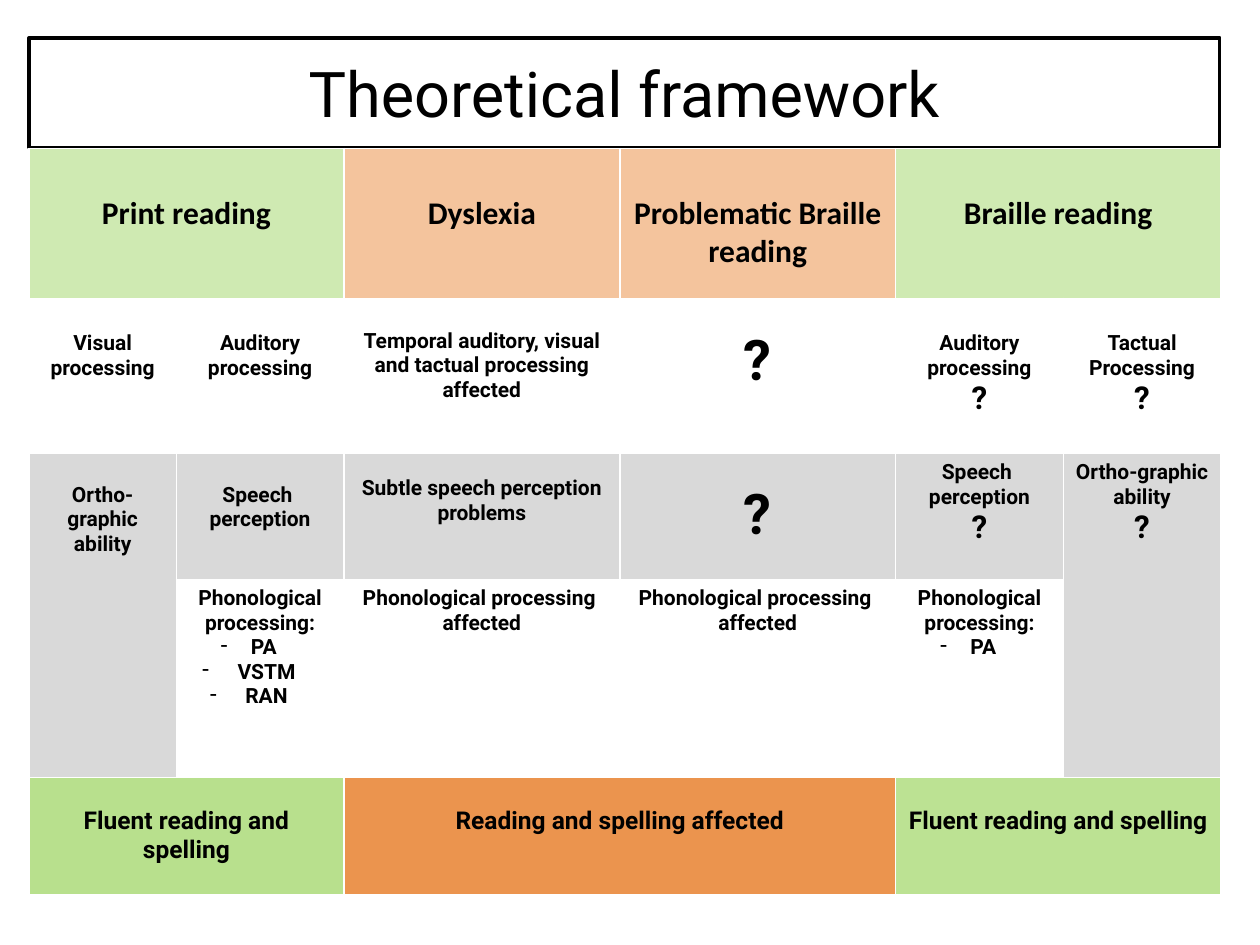
from lxml.etree import SubElement
from pptx import Presentation
from pptx.dml.color import RGBColor
from pptx.enum.text import MSO_ANCHOR, PP_ALIGN
from pptx.oxml import parse_xml
from pptx.oxml.ns import nsdecls, qn
from pptx.util import Inches, Pt

HUES = {"black": "000000", "white": "FFFFFF", "gray": "D9D9D9",
        "green": "92D050", "orange": "E46C0A"}
COLS = [1.17, 1.33, 2.19, 2.19, 1.33, 1.25]
ROWS = [1.2, 1.22, 1, 1.57, 0.93]

# Text lines: (wording, size); a leading "-" marks a bullet
HEAD, BODY, FOOT = 18, 12, 14
ASK, BIG = ("?", 18), ("?", 32)
PHONO = ["Phonological processing ", "affected"]
LIST = ["Phonological processing:", "-PA"]
FLUENT = ["Fluent reading and spelling"]

# Cells: row, column, row span, column span, fill, opacity, top inset, lines
CELLS = [
    (0, 0, 1, 2, "green", 44, 0.36, ["Print reading"]),
    (0, 2, 1, 1, "orange", 40, 0.36, ["Dyslexia"]),
    (0, 3, 1, 1, "orange", 40, 0.36, ["Problematic Braille reading"]),
    (0, 4, 1, 2, "green", 44, 0.36, ["Braille reading"]),
    (1, 0, 1, 1, "white", 100, 0.25, ["Visual", "processing"]),
    (1, 1, 1, 1, "white", 100, 0.25, ["Auditory", "processing"]),
    (1, 2, 1, 1, "white", 100, 0.23,
     ["Temporal auditory, visual and tactual processing affected"]),
    (1, 3, 1, 1, "white", 100, 0.23, [BIG]),
    (1, 4, 1, 1, "white", 100, 0.25, ["Auditory", "processing", ASK]),
    (1, 5, 1, 1, "white", 100, 0.25, ["Tactual", "Processing", ASK]),
    (2, 0, 2, 1, "gray", 100, 0.23, ["Ortho-graphic ability"]),
    (2, 1, 1, 1, "gray", 100, 0.23, ["Speech ", "perception"]),
    (2, 2, 1, 1, "gray", 100, 0.18, ["Subtle speech perception problems"]),
    (2, 3, 1, 1, "gray", 100, 0.23, [BIG]),
    (2, 4, 1, 1, "gray", 100, 0.05, ["Speech ", "perception", ASK]),
    (2, 5, 2, 1, "gray", 100, 0.05, ["Ortho-graphic ability", ASK]),
    (3, 1, 1, 1, "white", 100, 0.05, LIST + ["- VSTM", "- RAN"]),
    (3, 2, 1, 1, "white", 100, 0.05, PHONO),
    (3, 3, 1, 1, "white", 100, 0.05, PHONO),
    (3, 4, 1, 1, "white", 100, 0.05, LIST),
    (4, 0, 1, 2, "green", 65, 0.23, FLUENT),
    (4, 2, 1, 2, "orange", 72, 0.23, ["Reading and spelling affected"]),
    (4, 4, 1, 2, "green", 61, 0.23, FLUENT),
]


def hue(name):
    return RGBColor.from_string(HUES[name])


def add_run(para, text, size, face="Roboto", bold=True):
    para.alignment = PP_ALIGN.CENTER
    run = para.add_run()
    run.text = text
    font = run.font
    font.size, font.name, font.bold = Pt(size), face, bold
    font.color.rgb = hue("black")


def add_dash(para):
    props = para._p.get_or_add_pPr()
    props.set("marL", str(Inches(0.06)))
    props.set("indent", str(Inches(-0.24)))
    SubElement(props, qn("a:buChar")).set("char", "-")


def add_title(slide):
    title = slide.shapes.title
    title.left, title.top = Inches(0.23), Inches(0.3)
    title.width, title.height = Inches(9.45), Inches(0.87)
    title.fill.solid()
    title.fill.fore_color.rgb = hue("white")
    title.line.color.rgb = hue("black")
    title.line.width = Pt(2)
    frame = title.text_frame
    frame.vertical_anchor = MSO_ANCHOR.MIDDLE
    add_run(frame.paragraphs[0], "Theoretical framework", 36, bold=False)


def set_edges(cell, head):
    props = cell._tc.get_or_add_tcPr()
    for spot, side in enumerate("LRTB"):
        width = Pt(3 if head and side == "B" else 1)
        props.insert(spot, parse_xml(
            f'<a:ln{side} {nsdecls("a")} w="{width}"><a:solidFill>'
            f'<a:srgbClr val="{HUES["white"]}"/></a:solidFill></a:ln{side}>'))


def set_fill(cell, name, alpha):
    cell.fill.solid()
    cell.fill.fore_color.rgb = hue(name)
    if alpha < 100:
        color = cell._tc.tcPr.find(qn("a:solidFill")).find(qn("a:srgbClr"))
        SubElement(color, qn("a:alpha")).set("val", str(alpha * 1000))


def set_text(cell, row, top, lines):
    cell.margin_left = cell.margin_right = Inches(0.09)
    cell.margin_top = Inches(top)
    base = {0: HEAD, 4: FOOT}.get(row, BODY)
    face = "Calibri" if row == 0 else "Roboto"
    frame = cell.text_frame
    for num, line in enumerate(lines):
        text, size = (line, base) if isinstance(line, str) else line
        para = frame.add_paragraph() if num else frame.paragraphs[0]
        if text.startswith("-"):
            add_dash(para)
            text = text[1:]
        add_run(para, text, size, face)


def add_grid(slide):
    table = slide.shapes.add_table(
        len(ROWS), len(COLS), Inches(0.23), Inches(1.18),
        Inches(sum(COLS)), Inches(sum(ROWS))).table
    table.first_row = table.horz_banding = False
    for col, width in zip(table.columns, COLS):
        col.width = Inches(width)
    for row, height in zip(table.rows, ROWS):
        row.height = Inches(height)

    for row, col, down, wide, name, alpha, top, lines in CELLS:
        cell = table.cell(row, col)
        last = table.cell(row + down - 1, col + wide - 1)
        if last != cell and down * wide > 1:
            cell.merge(last)
        for r in range(row, row + down):
            for c in range(col, col + wide):
                part = table.cell(r, c)
                set_fill(part, name, alpha)
                set_edges(part, row == 0)
        set_text(cell, row, top, lines)


def main():
    deck = Presentation()
    deck.slide_width, deck.slide_height = Inches(10), Inches(7.5)
    slide = deck.slides.add_slide(deck.slide_layouts[5])
    add_title(slide)
    add_grid(slide)
    deck.save("out.pptx")


if __name__ == "__main__":
    main()
